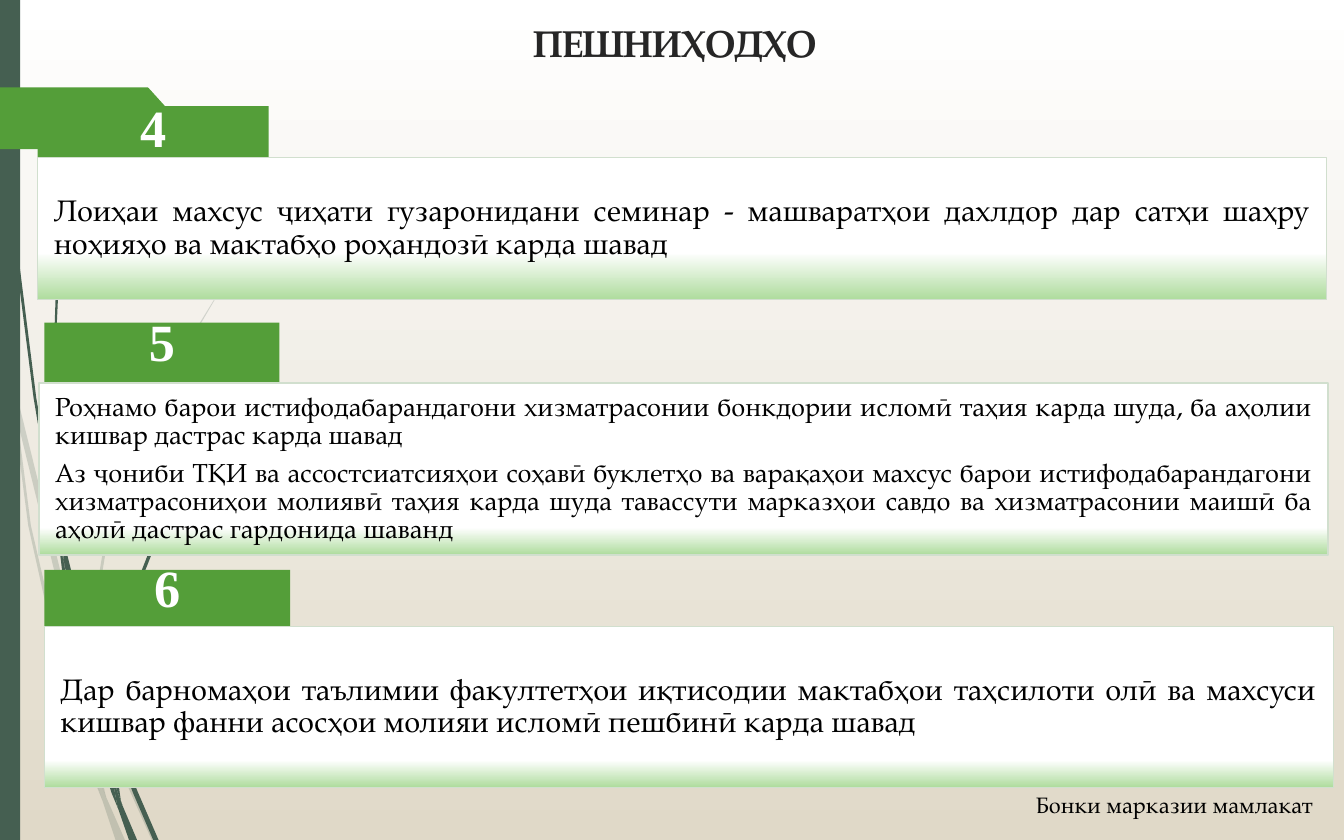
from lxml.etree import SubElement
from pptx import Presentation
from pptx.dml.color import RGBColor
from pptx.enum.shapes import MSO_SHAPE as Shape
from pptx.enum.text import MSO_ANCHOR as Anchor, PP_ALIGN as Align
from pptx.oxml.ns import qn
from pptx.util import Emu, Pt

PX = 9144  # 100 px to the inch
WIDTH, HEIGHT = 1000, 625
SERIF, DIGITS = "TeX Gyre Pagella", "Times New Roman"
COLOURS = {
    "paper": "FFFFFF", "sand": "E0D9C8", "pine": "455F51", "green": "549E39",
    "mint": "AEDC9D", "edge": "D1DFCE", "title": "262626", "text": "000000",
}

# Content
TITLE = "ПЕШНИҲОДҲО"
FOOTER = "Бонки марказии мамлакат"
# number, tab box, card box, percent where the white ends, text size, paragraphs
PROPOSALS = [
    ("4", (28, 79, 172, 66), (28, 117, 959, 106), 67, 16, [
        "Лоиҳаи махсус ҷиҳати гузаронидани семинар - машваратҳои дахлдор "
        "дар сатҳи шаҳру ноҳияҳо ва мактабҳо роҳандозӣ карда шавад"]),
    ("5", (33, 240, 175, 61), (29, 285, 959, 128), 84, 14, [
        "Роҳнамо барои истифодабарандагони хизматрасонии бонкдории исломӣ "
        "таҳия карда шуда, ба аҳолии кишвар дастрас карда шавад",
        "Аз ҷониби ТҚИ ва ассостсиатсияҳои соҳавӣ буклетҳо ва варақаҳои "
        "махсус барои истифодабарандагони хизматрасониҳои молиявӣ таҳия "
        "карда шуда тавассути марказҳои савдо ва хизматрасонии маишӣ ба "
        "аҳолӣ дастрас гардонида шаванд"]),
    ("6", (33, 424, 183, 57), (33, 466, 959, 120), 83, 16, [
        "Дар барномаҳои таълимии факултетҳои иқтисодии мактабҳои таҳсилоти "
        "олӣ ва махсуси кишвар фанни асосҳои молияи исломӣ пешбинӣ карда шавад"]),
]

# Outlines of the grass blades
PALE_BLADES = [
    [(8, 292), (6, 268), (0, 235), (0, 249), (8, 287)],
    [(43, 435), (63, 499), (64, 488), (47, 433), (11, 288), (13, 313)],
    [(69, 506), (66, 496), (66, 509), (92, 578), (113, 625), (116, 625), (95, 576)],
    [(70, 569), (52, 516), (23, 391), (13, 313), (8, 292), (21, 391), (49, 517),
     (69, 578), (76, 595), (74, 589)],
    [(63, 499), (65, 538), (70, 569), (72, 577), (79, 593), (78, 589), (68, 538),
     (66, 509), (66, 507)],
    [(66, 486), (83, 385), (120, 291), (171, 204), (201, 165), (217, 146), (234, 128),
     (234, 127), (217, 146), (201, 164), (171, 204), (118, 290), (81, 384), (64, 486),
     (64, 488), (66, 496)],
    [(66, 507), (66, 496), (64, 488), (63, 499)],
    [(72, 577), (70, 569), (74, 589), (76, 595), (86, 625), (93, 625), (79, 593)],
]
DARK_BLADES = [
    [(5, 91), (12, 194), (25, 296), (42, 397), (43, 401), (41, 381), (41, 377),
     (27, 296), (14, 193), (6, 91), (3, 40), (3, 0), (2, 0), (3, 40)],
    [(66, 493), (80, 537), (80, 526), (70, 492), (45, 393), (48, 421)],
    [(85, 541), (83, 534), (83, 547), (99, 590), (114, 625), (118, 625), (102, 588)],
    [(83, 576), (73, 548), (54, 464), (48, 421), (43, 398), (51, 464), (70, 549),
     (83, 590), (88, 602), (87, 598)],
    [(45, 393), (44, 378), (40, 291), (44, 204), (47, 161), (53, 117), (52, 117),
     (46, 161), (42, 204), (39, 291), (41, 374)],
    [(43, 398), (48, 421), (45, 393), (41, 374), (41, 378)],
    [(83, 528), (94, 460), (119, 397), (153, 339), (173, 312), (184, 299), (196, 287),
     (195, 287), (184, 298), (173, 311), (153, 338), (117, 395), (92, 459), (80, 526),
     (83, 534)],
    [(80, 537), (83, 576), (87, 588), (91, 599), (90, 596), (83, 547), (83, 534),
     (80, 526)],
    [(87, 588), (83, 576), (87, 598), (88, 602), (96, 625), (102, 625), (91, 599)],
]
MARKER = [(0, 65), (110, 65), (111, 66), (130, 87), (131, 88), (130, 90), (111, 110),
          (110, 111), (0, 111)]


def colour(name):
    return RGBColor.from_string(COLOURS[name])


def emu(*lengths):
    return [Emu(length * PX) for length in lengths]


def paint(shape, name, alpha=None):
    shape.shadow.inherit = False
    shape.fill.solid()
    shape.fill.fore_color.rgb = colour(name)
    shape.line.fill.background()
    if alpha:
        solid = shape._element.spPr.find(qn("a:solidFill"))
        SubElement(solid[0], qn("a:alpha")).set("val", str(alpha * 1000))


def fade_down(fill, first, last, start=0):
    fill.gradient()
    fill.gradient_angle = 270
    for stop, name, position in zip(fill.gradient_stops, (first, last), (start / 100, 1)):
        stop.color.rgb = colour(name)
        stop.position = position


def add_outline(page, points, name, alpha=None):
    builder = page.shapes.build_freeform(*points[0], scale=PX)
    builder.add_line_segments(points[1:], close=True)
    paint(builder.convert_to_shape(), name, alpha)


def add_box(page, box, name):
    shape = page.shapes.add_shape(Shape.RECTANGLE, *emu(*box))
    paint(shape, name)
    return shape


def write(shape, texts, size, name, align, anchor, insets, font=SERIF, bold=False,
          spacing=1.0, after=0):
    frame = shape.text_frame
    frame.word_wrap = True
    frame.vertical_anchor = anchor
    (frame.margin_left, frame.margin_top,
     frame.margin_right, frame.margin_bottom) = emu(*insets)
    for index, text in enumerate(texts):
        para = frame.add_paragraph() if index else frame.paragraphs[0]
        para.text = text
        para.alignment = align
        para.line_spacing = spacing
        para.space_before, para.space_after = Pt(0), Pt(after)
        para.font.size, para.font.name, para.font.bold = Pt(size), font, bold
        para.font.color.rgb = colour(name)


deck = Presentation()
deck.slide_width, deck.slide_height = emu(WIDTH, HEIGHT)
page = deck.slides.add_slide(deck.slide_layouts[5])

# Background and side decoration
fade_down(page.background.fill, "paper", "sand")
for blade in PALE_BLADES:
    add_outline(page, blade, "pine", alpha=20)
for blade in DARK_BLADES:
    add_outline(page, blade, "pine")
add_box(page, (0, 0, 15, HEIGHT), "pine")
add_outline(page, MARKER, "green")

# Title and footer
title = page.shapes.title
title.left, title.top, title.width, title.height = emu(12, 10, 980, 69)
write(title, [TITLE], 20, "title", Align.CENTER, Anchor.TOP, (10, 5, 10, 5), bold=True)
footer = page.shapes.add_textbox(*emu(445, 584, 542, 30))
write(footer, [FOOTER], 12, "text", Align.RIGHT, Anchor.TOP, (10, 5, 10, 5))

# Numbered proposals: the card covers the lower part of its tab
for number, tab_box, card_box, white_end, size, texts in PROPOSALS:
    tab = add_box(page, tab_box, "green")
    tab_height = tab_box[3]
    covered = tab_height - round(tab_height * 0.54)
    write(tab, [number], 28, "paper", Align.CENTER, Anchor.MIDDLE, (0, 0, 0, covered),
          font=DIGITS, bold=True, spacing=0.9)
    card = add_box(page, card_box, "paper")
    fade_down(card.fill, "paper", "mint", white_end)
    card.line.color.rgb = colour("edge")
    card.line.width = Pt(0.75)
    write(card, texts, size, "text", Align.JUSTIFY, Anchor.MIDDLE, (12, 2, 12, 2),
          spacing=0.9, after=round(size * 0.35, 1))

deck.save("out.pptx")
